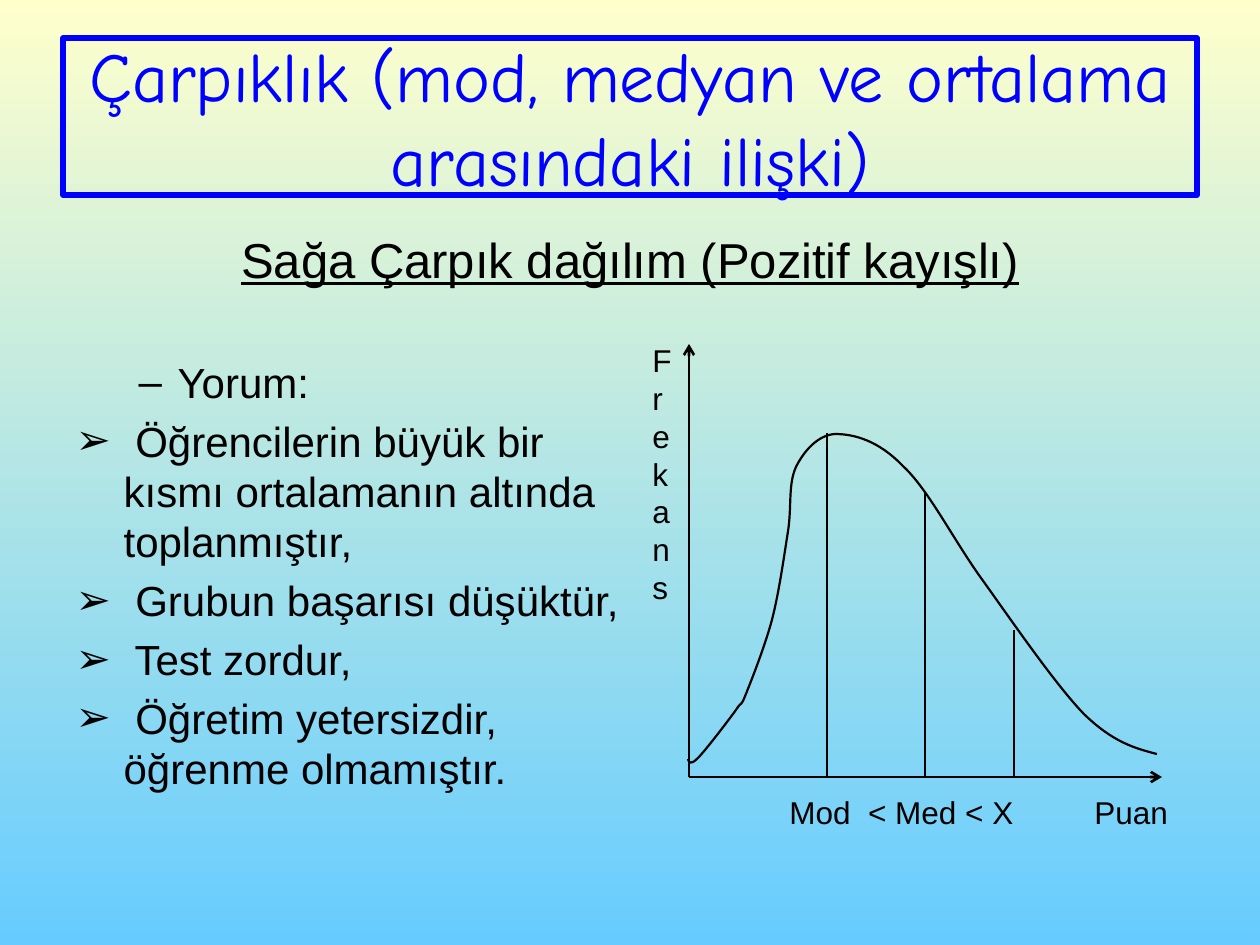
from lxml.etree import SubElement
from pptx import Presentation
from pptx.dml.color import RGBColor
from pptx.enum.shapes import MSO_CONNECTOR as Connector
from pptx.enum.text import MSO_ANCHOR as Anchor, MSO_AUTO_SIZE as AutoSize, PP_ALIGN as Align
from pptx.oxml.ns import qn
from pptx.util import Pt

SCALE = 914400 / 126  # EMU per px
COLORS = {"top": "FFFFCC", "bottom": "66CCFF", "title": "0000FF", "ink": "000000"}
AXIS_LEFT, AXIS_BASE = 689, 777

BULLETS = [
    "Öğrencilerin büyük bir kısmı ortalamanın altında toplanmıştır,",
    "Grubun başarısı düşüktür,",
    "Test zordur,",
    "Öğretim yetersizdir, öğrenme olmamıştır.",
]

# Skewed curve: a start point, then two controls and an end for each segment
CURVE = [
    (688, 759),
    (689, 762), (690, 766), (698, 758),
    (706, 750), (728, 721), (736, 710),
    (743, 699), (740, 709), (746, 694),
    (752, 679), (765, 646), (772, 620),
    (779, 593), (784, 557), (788, 532),
    (792, 507), (788, 485), (796, 467),
    (804, 451), (818, 435), (835, 434),
    (855, 434), (879, 441), (903, 466),
    (929, 490), (954, 541), (984, 582),
    (1014, 624), (1056, 685), (1084, 714),
    (1113, 742), (1134, 748), (1157, 754),
]


def px(value):
    return round(value * SCALE)


def color(name):
    return RGBColor.from_string(COLORS[name])


def style_font(paragraph, size, name="Arial", ink="ink"):
    font = paragraph.font
    font.name, font.size = name, Pt(size)
    font.color.rgb = color(ink)


def style_line(shape, width, ink="ink"):
    shape.line.color.rgb = color(ink)
    shape.line.width = Pt(width)


def place(shape, left, top, width, height):
    shape.left, shape.top = px(left), px(top)
    shape.width, shape.height = px(width), px(height)


def set_bullet(paragraph, character, margin, indent):
    properties = paragraph._p.get_or_add_pPr()
    properties.set("marL", str(px(margin)))
    properties.set("indent", str(px(indent)))
    SubElement(properties, qn("a:buFont"), typeface="Arial")
    SubElement(properties, qn("a:buChar"), char=character)


def set_background(slide):
    fill = slide.background.fill
    fill.gradient()
    fill.gradient_angle = 270
    for stop, name in zip(fill.gradient_stops, ("top", "bottom")):
        stop.color.rgb = color(name)


def fill_title(title, text):
    place(title, 63, 38, 1134, 157)
    style_line(title, 3.25, "title")
    frame = title.text_frame
    frame.text = text
    frame.auto_size, frame.vertical_anchor = AutoSize.NONE, Anchor.MIDDLE
    paragraph = frame.paragraphs[0]
    paragraph.alignment = Align.CENTER
    style_font(paragraph, 40, "Comic Neue", "title")


def fill_body(body, heading, bullets):
    place(body, 63, 350, 577, 624)
    frame = body.text_frame
    frame.auto_size = AutoSize.NONE
    frame.text = "\n".join([heading] + [f" {bullet}" for bullet in bullets])
    for index, paragraph in enumerate(frame.paragraphs):
        if index == 0:
            paragraph.level = 1
            set_bullet(paragraph, "–", 102, -39)
        else:
            set_bullet(paragraph, "➢", 48, -48)
        style_font(paragraph, 24)


def add_label(slide, text, left, top, width, height, size=18):
    box = slide.shapes.add_textbox(px(left), px(top), px(width), px(height))
    frame = box.text_frame
    frame.word_wrap, frame.auto_size = True, AutoSize.SHAPE_TO_FIT_TEXT
    frame.text = text
    style_font(frame.paragraphs[0], size)
    return frame.paragraphs[0]


def add_line(slide, start, end, width, arrow=False):
    ends = [px(value) for value in (*start, *end)]
    line = slide.shapes.add_connector(Connector.STRAIGHT, *ends)
    style_line(line, width)
    if arrow:
        SubElement(line.line._get_or_add_ln(), qn("a:tailEnd"), type="arrow")
    SubElement(line._element.spPr, qn("a:effectLst"))


def add_curve(slide, points, width):
    builder = slide.shapes.build_freeform(*points[0], scale=SCALE)
    builder.add_line_segments(points[1:], close=False)
    curve = builder.convert_to_shape()
    curve.shadow.inherit = False
    curve.fill.background()
    style_line(curve, width)
    # Each three straight steps become one Bézier segment
    path = next(curve._element.iter(qn("a:path")))
    steps = path.findall(qn("a:lnTo"))
    for first in range(0, len(steps), 3):
        segment = SubElement(path, qn("a:cubicBezTo"))
        for step in steps[first:first + 3]:
            segment.append(step[0])
            path.remove(step)


def main():
    presentation = Presentation()
    presentation.slide_width, presentation.slide_height = px(1260), px(945)
    slide = presentation.slides.add_slide(presentation.slide_layouts[1])
    set_background(slide)

    # Title and comments
    fill_title(slide.shapes.title, "Çarpıklık (mod, medyan ve ortalama arasındaki ilişki)")
    fill_body(slide.placeholders[1], "Yorum:", BULLETS)

    # Axes and their labels
    origin = (AXIS_LEFT, AXIS_BASE)
    for end in ((AXIS_LEFT, 344), (1162, AXIS_BASE)):
        add_line(slide, origin, end, 1.5, arrow=True)
    add_label(slide, "Puan", 1082, 787, 137, 50)
    add_label(slide, "Frekans", 640, 335, 49, 280)
    add_label(slide, "Mod  < Med < X", 777, 787, 256, 50)

    # Distribution with mode, median and mean
    add_curve(slide, CURVE, 1.25)
    for x, top in ((827, 433), (925, 492), (1014, 630)):
        add_line(slide, (x, top), (x, AXIS_BASE), 1.25)

    # Subtitle
    subtitle = add_label(slide, "Sağa Çarpık dağılım (Pozitif kayışlı)", 187, 223, 886, 72, 28)
    subtitle.alignment = Align.CENTER
    subtitle.font.underline = True

    presentation.save("out.pptx")


if __name__ == "__main__":
    main()
